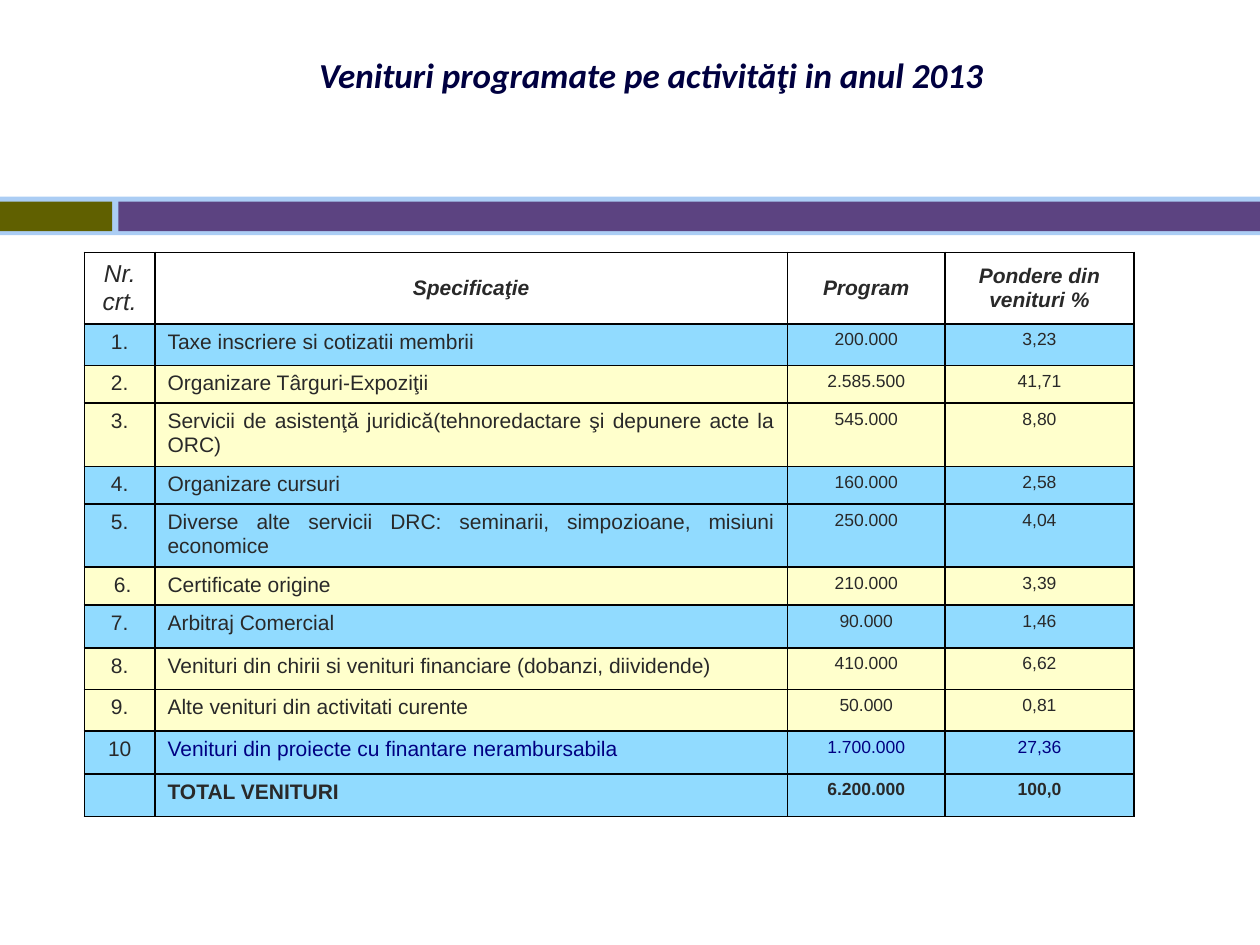
from lxml import etree
from pptx import Presentation
from pptx.dml.color import RGBColor
from pptx.enum.shapes import MSO_SHAPE
from pptx.enum.text import MSO_ANCHOR, PP_ALIGN
from pptx.oxml.ns import qn
from pptx.util import Inches, Pt

RECT = MSO_SHAPE.RECTANGLE
TOP, MIDDLE = MSO_ANCHOR.TOP, MSO_ANCHOR.MIDDLE
CENTER, JUSTIFY = PP_ALIGN.CENTER, PP_ALIGN.JUSTIFY

COLORS = {
    "navy": "000040", "ink": "292929", "accent": "000082", "border": "000000",
    "white": "FFFFFF", "blue": "91DBFF", "cream": "FFFFCC",
    "rail": "ABCDF4", "olive": "606000", "purple": "5C4381",
}
TITLE = {"name": "Calibri", "size": Pt(20), "bold": True, "italic": True}
BODY = {"name": "Arial", "size": Pt(12), "bold": False, "italic": False}
AMOUNT = BODY | {"size": Pt(10)}
HEADING = BODY | {"bold": True, "italic": True}
NUMBER_HEADING = BODY | {"size": Pt(14), "italic": True}

COLUMNS = [0.56, 5.02, 1.25, 1.5]
HEADER = ["Nr. crt.", "Specificaţie", "Program", "Pondere din venituri %"]
HEADER_HEIGHT = 0.42
# height, fill, cell texts
INCOME = [
    (0.33, "blue", ["1.", "Taxe inscriere si cotizatii membrii", "200.000", "3,23"]),
    (0.2, "cream", ["2.", "Organizare Târguri-Expoziţii", "2.585.500", "41,71"]),
    (0.42, "cream", ["3.", "Servicii de asistenţă juridică(tehnoredactare şi depunere acte la ORC)",
                     "545.000", "8,80"]),
    (0.25, "blue", ["4.", "Organizare cursuri", "160.000", "2,58"]),
    (0.25, "blue", ["5.", "Diverse alte servicii DRC: seminarii, simpozioane, misiuni economice",
                    "250.000", "4,04"]),
    (0.25, "cream", [" 6.", "Certificate origine", "210.000", "3,39"]),
    (0.34, "blue", ["7.", "Arbitraj Comercial", "90.000", "1,46"]),
    (0.33, "cream", ["8.", "Venituri din chirii si venituri financiare (dobanzi, diividende)",
                     "410.000", "6,62"]),
    (0.33, "cream", ["9.", "Alte venituri din activitati curente", "50.000", "0,81"]),
    (0.34, "blue", ["10", "Venituri din proiecte cu finantare nerambursabila",
                    "1.700.000", "27,36"]),
    (0.34, "blue", ["", "TOTAL VENITURI", "6.200.000", "100,0"]),
]
PROJECTS, TOTAL = len(INCOME) - 1, len(INCOME)


def rgb(name):
    return RGBColor.from_string(COLORS[name])


class Deck:
    """Holds the presentation, its current slide and the shared style."""

    def __init__(self, width, height):
        self.prs = Presentation()
        self.prs.slide_width, self.prs.slide_height = Inches(width), Inches(height)
        self.s = self.prs.slides.add_slide(self.prs.slide_layouts[6])

    def box(self, x, y, w, h):
        """Turn shares of the slide's size into lengths."""
        width, height = self.prs.slide_width, self.prs.slide_height
        return int(x * width), int(y * height), int(w * width), int(h * height)

    def bar(self, x, y, w, h, color):
        sp = self.s.shapes.add_shape(RECT, *self.box(x, y, w, h))
        sp.shadow.inherit = False
        sp.fill.solid()
        sp.fill.fore_color.rgb = rgb(color)
        sp.line.fill.background()

    def set_text(self, tf, text, style, color, align):
        p = tf.paragraphs[0]
        p.alignment = align
        if not text:
            end = etree.SubElement(p._p, qn("a:endParaRPr"))
            end.set("sz", str(int(style["size"].pt * 100)))
            return
        r = p.add_run()
        r.text = text
        for name, value in style.items():
            setattr(r.font, name, value)
        r.font.color.rgb = rgb(color)

    def title(self, x, y, w, h, text):
        tf = self.s.shapes.add_textbox(*self.box(x, y, w, h)).text_frame
        tf.word_wrap = True
        tf.vertical_anchor = MIDDLE
        self.set_text(tf, text, TITLE, "navy", CENTER)

    def cell(self, cell, text, style, color, align, anchor, fill):
        cell.vertical_anchor = anchor
        self.set_text(cell.text_frame, text, style, color, align)
        tc_pr = cell._tc.get_or_add_tcPr()
        for side in ("lnL", "lnR", "lnT", "lnB"):
            ln = etree.SubElement(tc_pr, qn(f"a:{side}"), w=str(Pt(1)))
            solid = etree.SubElement(ln, qn("a:solidFill"))
            etree.SubElement(solid, qn("a:srgbClr"), val=COLORS["border"])
        cell.fill.solid()
        cell.fill.fore_color.rgb = rgb(fill)

    def income_table(self, x, y, w, h):
        shape = self.s.shapes.add_table(len(INCOME) + 1, len(COLUMNS), *self.box(x, y, w, h))
        table = shape.table
        table.first_row = table.horz_banding = False
        for column, width in zip(table.columns, COLUMNS):
            column.width = Inches(width)
        table.rows[0].height = Inches(HEADER_HEIGHT)
        for col, text in enumerate(HEADER):
            style = HEADING if col else NUMBER_HEADING
            self.cell(table.cell(0, col), text, style, "ink", CENTER, MIDDLE, "white")
        for row, (height, fill, texts) in enumerate(INCOME, 1):
            table.rows[row].height = Inches(height)
            for col, text in enumerate(texts):
                style = (AMOUNT if col > 1 else BODY) | {"bold": row == TOTAL}
                color = "accent" if row == PROJECTS and col else "ink"
                align = JUSTIFY if col == 1 else CENTER
                self.cell(table.cell(row, col), text, style, color, align, TOP, fill)


def main():
    deck = Deck(10, 7.5)
    deck.bar(0, 0.208, 1, 0.041, "rail")
    deck.bar(0, 0.2135, 0.089, 0.031, "olive")
    deck.bar(0.094, 0.2135, 0.906, 0.031, "purple")
    deck.title(0.067, 0.044, 0.9, 0.07, "Venituri programate pe activităţi in anul 2013")
    deck.income_table(0.067, 0.267, 0.833, 0.507)
    deck.prs.save("out.pptx")


if __name__ == "__main__":
    main()
